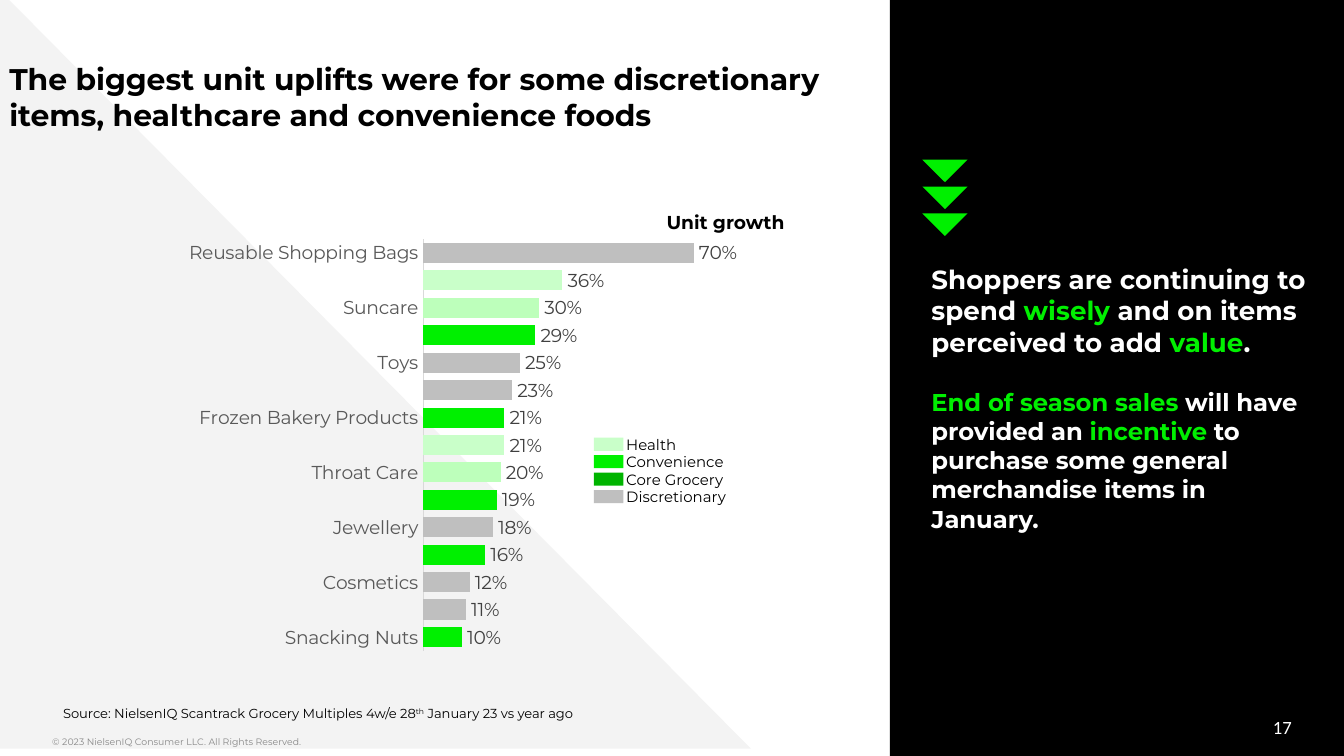
from dataclasses import dataclass

from pptx import Presentation
from pptx.chart.data import CategoryChartData
from pptx.dml.color import RGBColor
from pptx.enum.chart import XL_CHART_TYPE, XL_LABEL_POSITION, XL_TICK_MARK
from pptx.enum.shapes import MSO_SHAPE
from pptx.enum.text import MSO_ANCHOR, PP_ALIGN
from pptx.oxml import parse_xml
from pptx.oxml.ns import nsdecls
from pptx.util import Pt


@dataclass(frozen=True)
class Theme:
    """Colours, fonts and type sizes of the slide."""
    font: str = "Montserrat"
    number_font: str = "Calibri"
    black: str = "000000"
    white: str = "FFFFFF"
    pale: str = "F3F3F3"
    muted: str = "888888"
    axis_text: str = "595959"
    label_text: str = "404040"
    axis_line: str = "D9D9D9"
    health: str = "C9FFC9"
    health_alt: str = "BDFFBB"
    green: str = "00F000"
    core: str = "00B400"
    grey: str = "BFBFBF"
    title: int = 16
    lead: int = 14
    body: int = 13
    chart: int = 10
    legend: int = 8
    source: int = 7
    footer: int = 5


T = Theme()
PLAIN = (0, 3.6, 0, 3.6)
TALL = (0, 7.2, 0, 7.2)

GROWTH = [
    ("Reusable Shopping Bags", 0.70, T.grey),
    ("Cough Cold & Flu", 0.36, T.health),
    ("Suncare", 0.30, T.health_alt),
    ("Fresh Noodles", 0.29, T.green),
    ("Toys", 0.25, T.grey),
    ("Christmas", 0.23, T.grey),
    ("Frozen Bakery Products", 0.21, T.green),
    ("Anti Smoking", 0.21, T.health),
    ("Throat Care", 0.20, T.health_alt),
    ("Fresh Dough/Pastry", 0.19, T.green),
    ("Jewellery", 0.18, T.grey),
    ("Ambient Fruit Juice", 0.16, T.green),
    ("Cosmetics", 0.12, T.grey),
    ("Plastic Food/Household Storage", 0.11, T.grey),
    ("Snacking Nuts", 0.10, T.green),
]
LEGEND = [("Health", T.health), ("Convenience", T.green),
          ("Core Grocery", T.core), ("Discretionary", T.grey)]


def rgb(value):
    """Turn a hex string into a colour."""
    return RGBColor.from_string(value)


def style_font(font, size, color, name=T.font, bold=False):
    """Set the face, size, colour and weight of a font."""
    font.name, font.size, font.bold = name, Pt(size), bold
    font.color.rgb = rgb(color)


def add_shape(s, kind, box, color, rotation=0):
    """Add a plain filled shape."""
    sp = s.shapes.add_shape(kind, *map(Pt, box))
    sp.shadow.inherit = False
    sp.fill.solid()
    sp.fill.fore_color.rgb = rgb(color)
    sp.line.fill.background()
    sp.rotation = rotation


def add_text(s, box, text, *, size, color=T.black, name=T.font, bold=False,
             align=PP_ALIGN.LEFT, anchor=MSO_ANCHOR.TOP,
             insets=(7.2, 3.6, 7.2, 3.6), wrap=True, gap=0):
    """Add text given as a string or as paragraphs of (text, changes) runs."""
    tf = s.shapes.add_textbox(*map(Pt, box)).text_frame
    tf.word_wrap, tf.vertical_anchor = wrap, anchor
    tf.margin_left, tf.margin_top, tf.margin_right, tf.margin_bottom = map(Pt, insets)
    paragraphs = [[(text, {})]] if isinstance(text, str) else text
    for i, runs in enumerate(paragraphs):
        p = tf.add_paragraph() if i else tf.paragraphs[0]
        p.alignment = align
        if i:
            p.space_before = Pt(gap)
        for words, changes in runs:
            r = p.add_run()
            r.text = words
            style_font(r.font, changes.get("size", size), changes.get("color", color), name, bold)
            if "baseline" in changes:
                r.font._element.set("baseline", str(changes["baseline"]))


def add_growth_chart(s, box):
    """Add the bar chart of unit growth by category."""
    data = CategoryChartData(number_format="0%")
    data.categories = [name for name, _, _ in GROWTH]
    data.add_series("Series 1", [value for _, value, _ in GROWTH])
    chart = s.shapes.add_chart(XL_CHART_TYPE.BAR_CLUSTERED, *map(Pt, box), data).chart
    chart.has_legend = chart.has_title = False
    style_font(chart.font, T.chart, T.black, "Arial")

    axis = chart.category_axis
    axis.reverse_order = True
    axis.major_tick_mark = axis.minor_tick_mark = XL_TICK_MARK.NONE
    axis.format.line.color.rgb = rgb(T.axis_line)
    axis.format.line.width = Pt(0.75)
    style_font(axis.tick_labels.font, T.chart, T.axis_text)

    values = chart.value_axis
    values.visible = values.has_major_gridlines = False
    values.minimum_scale, values.maximum_scale = 0, 0.8

    plot = chart.plots[0]
    plot.gap_width, plot.vary_by_categories = 37, False
    plot.has_data_labels = True
    labels = plot.data_labels
    labels.show_value = True
    labels.number_format, labels.number_format_is_linked = "0%", False
    labels.position = XL_LABEL_POSITION.OUTSIDE_END
    style_font(labels.font, T.chart, T.label_text)

    series = plot.series[0]
    series.format.fill.solid()
    series.format.fill.fore_color.rgb = rgb(T.green)
    for i, (_, _, color) in enumerate(GROWTH):
        fill = series.points[i].format.fill
        fill.solid()
        fill.fore_color.rgb = rgb(color)
    set_plot_area(chart, x=0.442, y=0.033, w=0.503, h=0.909)


def set_plot_area(chart, **fractions):
    """Fix the inner plot area as fractions of the chart."""
    sizes = "".join(f'<c:{k} val="{v}"/>' for k, v in fractions.items())
    layout = parse_xml(
        f'<c:layout {nsdecls("c")}><c:manualLayout><c:layoutTarget val="inner"/>'
        f'<c:xMode val="edge"/><c:yMode val="edge"/>{sizes}</c:manualLayout></c:layout>')
    area = chart._chartSpace.chart.plotArea
    for old in area.findall(layout.tag):
        area.remove(old)
    area.insert(0, layout)


def add_legend(s, left, top, step):
    """Add a swatch and a name for each product group."""
    for i, (name, color) in enumerate(LEGEND):
        y = top + i * step
        add_shape(s, MSO_SHAPE.RECTANGLE, (left, y + 4.8, 15.8, 7), color)
        add_text(s, (left + 10.2, y, 91.4, 17.3), name, size=T.legend)


def add_message(s):
    """Add the arrows and the message of the side panel."""
    for i in range(3):
        add_shape(s, MSO_SHAPE.RIGHT_TRIANGLE, (497.7, 77 + i * 14.4, 17.1, 17.1), T.green, 315)
    accent, small = {"color": T.green}, {"size": T.body}
    add_text(s, (499, 137.5, 201.6, 254.9), [
        [("Shoppers are continuing to spend ", {}), ("wisely", accent),
         (" and on items perceived to add ", {}), ("value", accent), (".", {})],
        [("End of season sales", accent | small), (" will have provided an ", small),
         ("incentive", accent | small),
         (" to purchase some general merchandise items in January.", small)],
    ], size=T.lead, color=T.white, bold=True, insets=PLAIN, gap=16)


def main():
    """Build the slide and save it."""
    prs = Presentation()
    prs.slide_width, prs.slide_height = Pt(720), Pt(405)
    s = prs.slides.add_slide(prs.slide_layouts[6])
    add_shape(s, MSO_SHAPE.RECTANGLE, (476.8, -1.4, 247, 407.5), T.black)
    add_shape(s, MSO_SHAPE.RIGHT_TRIANGLE, (0, -5, 402.2, 406), T.pale)
    add_text(s, (28, 391, 398.9, 14), "© 2023 NielsenIQ Consumer LLC. All Rights Reserved.",
             size=T.footer, color=T.muted, insets=PLAIN)
    add_text(s, (530, 378.7, 162, 21.6), "17", size=T.chart, color=T.white, name=T.number_font,
             align=PP_ALIGN.RIGHT, anchor=MSO_ANCHOR.MIDDLE, insets=PLAIN)
    add_message(s)
    add_text(s, (5, 25.2, 471.6, 52.6),
             "The biggest unit uplifts were for some discretionary items, "
             "healthcare and convenience foods", size=T.title, bold=True, insets=TALL)
    add_growth_chart(s, (81.4, 120.2, 329, 242.6))
    add_text(s, (22.3, 373.7, 642.2, 10.8), [[
        ("Source: NielsenIQ Scantrack Grocery Multiples 4w/e 28", {}),
        ("th", {"baseline": 30000}), (" January 23 vs year ago", {}),
    ]], size=T.source, insets=(11.5, 7.2, 0, 7.2))
    add_text(s, (350, 109.4, 78.5, 19.4), "Unit growth", size=T.chart, bold=True, wrap=False)
    add_legend(s, 318.2, 229.7, 9.36)
    prs.save("out.pptx")


if __name__ == "__main__":
    main()
